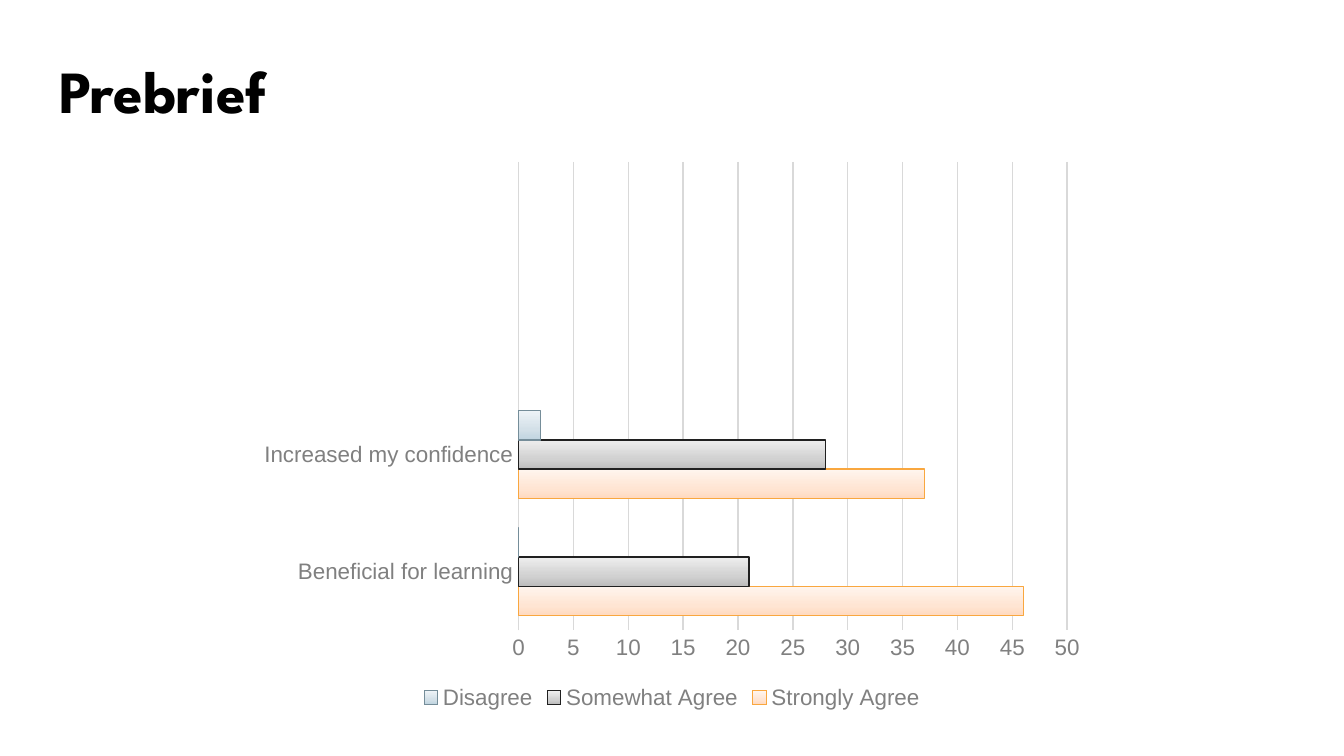
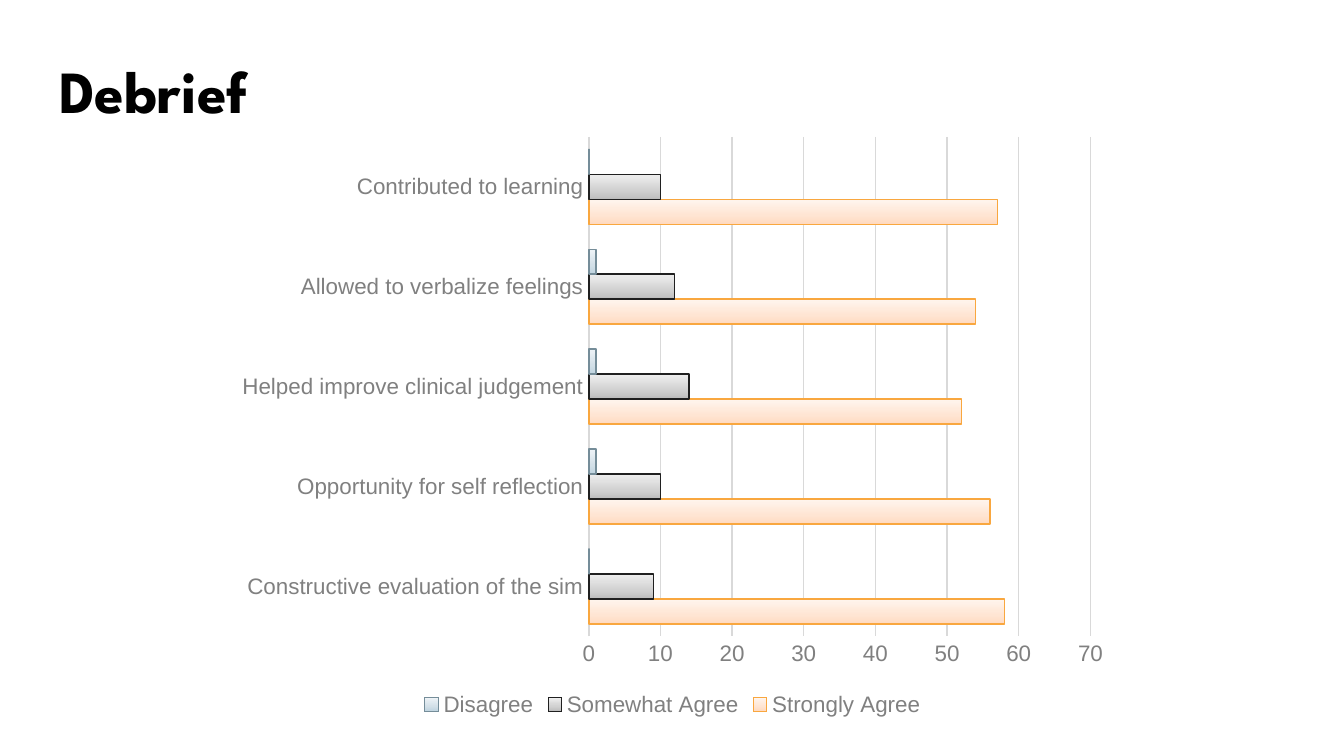
"""Build two survey slides, each with a title and a clustered bar chart."""
from lxml.etree import SubElement
from pptx import Presentation
from pptx.chart.data import CategoryChartData
from pptx.dml.color import RGBColor
from pptx.enum.chart import XL_CHART_TYPE as CT, XL_LEGEND_POSITION as LP, XL_TICK_MARK as TM
from pptx.enum.text import MSO_ANCHOR, PP_ALIGN
from pptx.oxml.ns import qn
from pptx.util import Inches, Pt

GREY, GRID = "808080", "D9D9D9"
SERIES = [
    ("Strongly Agree", ("FFDAC0", "FFE5D3", "FFF5EE"), "F9A73F"),
    ("Somewhat Agree", ("BDBDBD", "D1D1D1", "EEEEEE"), "202020"),
    ("Disagree", ("C0D4E0", "D3E0E8", "EEF3F7"), "758D99"),
]
SLIDES = [
    ("Prebrief", (1.84, 1.12, 6.32, 4.2), 50, 5,
     ["Beneficial for learning", "Increased my confidence", "", ""],
     [(46, 37, None, None), (21, 28, None, None), (0, 2, None, None)]),
    ("Debrief", (1.67, 0.93, 6.67, 4.44), 70, 10,
     ["Constructive evaluation of the sim", "Opportunity for self reflection",
      "Helped improve clinical judgement", "Allowed to verbalize feelings",
      "Contributed to learning"],
     [(58, 56, 52, 54, 57), (9, 10, 14, 12, 10), (0, 1, 1, 1, 0)]),
]


def style_font(font, size, color, name="Arial", bold=False):
    font.size, font.name, font.bold = Pt(size), name, bold
    font.color.rgb = RGBColor.from_string(color)


def style_line(line, color):
    line.color.rgb = RGBColor.from_string(color)
    line.width = Pt(0.75)


prs = Presentation()
prs.slide_width, prs.slide_height = Inches(10), Inches(10 * 9 / 16)

for title, box, top, step, cats, rows in SLIDES:
    s = prs.slides.add_slide(prs.slide_layouts[5])
    sp = s.shapes.title
    sp.left, sp.top, sp.width, sp.height = map(Inches, (0.34, 0.3, 9.66, 0.63))
    tf = sp.text_frame
    tf.text = title
    tf.margin_left = tf.margin_right = tf.margin_top = tf.margin_bottom = Inches(0.1)
    tf.vertical_anchor = MSO_ANCHOR.TOP
    p = tf.paragraphs[0]
    p.alignment = PP_ALIGN.LEFT
    style_font(p.font, 32, "000000", "League Spartan", True)

    data = CategoryChartData()
    data.categories = cats
    for (name, _, _), vals in zip(SERIES, rows):
        data.add_series(name, vals)
    chart = s.shapes.add_chart(CT.BAR_CLUSTERED, *map(Inches, box), data).chart
    style_font(chart.font, 10, "000000")
    chart.has_title = False
    chart.has_legend = True
    chart.legend.position = LP.BOTTOM
    chart.legend.include_in_layout = False
    style_font(chart.legend.font, 12, GREY)

    for axis in (chart.category_axis, chart.value_axis):
        axis.major_tick_mark = axis.minor_tick_mark = TM.NONE
        style_font(axis.tick_labels.font, 12, GREY)
    style_line(chart.category_axis.format.line, GRID)
    axis = chart.value_axis
    axis.minimum_scale, axis.maximum_scale, axis.major_unit = 0, top, step
    axis.format.line.fill.background()
    axis.has_major_gridlines = True
    style_line(axis.major_gridlines.format.line, GRID)

    plot = chart.plots[0]
    plot.gap_width, plot.vary_by_categories = 100, False
    for ser, (_, colors, outline) in zip(plot.series, SERIES):
        fill = ser.format.fill
        fill.gradient()
        fill.gradient_angle = 90
        stops = ser._element.find(".//" + qn("a:gsLst"))
        stops.clear()
        for pos, color in zip((0, 35, 100), colors):
            gs = SubElement(stops, qn("a:gs"), pos=str(pos * 1000))
            SubElement(gs, qn("a:srgbClr"), val=color)
        style_line(ser.format.line, outline)

prs.save("out.pptx")
